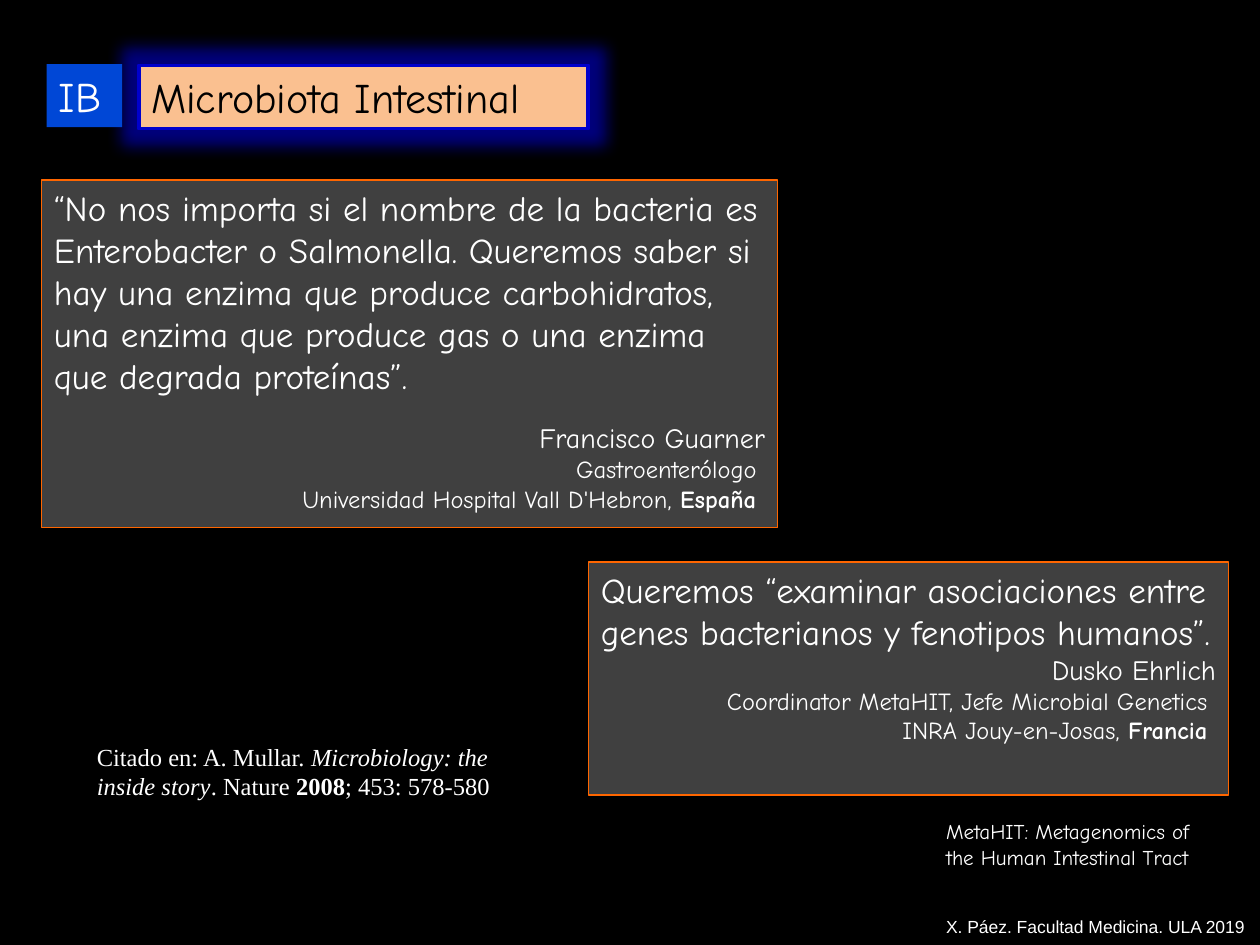
from lxml import etree
from pptx import Presentation
from pptx import util as u
from pptx.dml.color import RGBColor
from pptx.enum import shapes, text
from pptx.oxml import ns

COLORS = {
    "night": "000000",
    "chalk": "FFFFFF",
    "peach": "FAC090",
    "edge": "0000CC",
    "badge": "0047D6",
    "panel": "404040",
    "orange": "FF6600",
}
COLUMNS, ROWS = 100, 75
COMIC, SERIF, SANS = "Comic Neue", "Times New Roman", "Arial"
LEFT, RIGHT = text.PP_ALIGN.LEFT, text.PP_ALIGN.RIGHT

deck = Presentation()
deck.slide_width, deck.slide_height = u.Inches(10), u.Inches(7.5)
slide = deck.slides.add_slide(deck.slide_layouts[5])
column, row = deck.slide_width / COLUMNS, deck.slide_height / ROWS
slide.background.fill.solid()
slide.background.fill.fore_color.rgb = RGBColor.from_string(COLORS["night"])


def dress(block, grid, fill=None, line=None, width=0.75):
    units = (column, row, column, row)
    for side, cells, unit in zip(("left", "top", "width", "height"), grid, units):
        setattr(block, side, round(cells * unit))
    block.shadow.inherit = False
    if fill:
        block.fill.solid()
        block.fill.fore_color.rgb = RGBColor.from_string(COLORS[fill])
    if line:
        block.line.color.rgb = RGBColor.from_string(COLORS[line])
        block.line.width = u.Pt(width)
    else:
        block.line.fill.background()


def write(block, paragraphs, font, color="chalk", wrap=True):
    frame = block.text_frame
    layout = {
        "word_wrap": wrap,
        "auto_size": text.MSO_AUTO_SIZE.NONE,
        "vertical_anchor": text.MSO_ANCHOR.TOP,
    }
    for name, value in layout.items():
        setattr(frame, name, value)
    for index, (size, align, before, runs) in enumerate(paragraphs):
        paragraph = frame.add_paragraph() if index else frame.paragraphs[0]
        paragraph.alignment = align
        paragraph.space_before = u.Pt(before)
        for words, style in runs:
            run = paragraph.add_run()
            run.text = words
            look = {"name": font, "size": u.Pt(size), **style}
            for name, value in look.items():
                setattr(run.font, name, value)
            run.font.color.rgb = RGBColor.from_string(COLORS[color])


heading = slide.shapes.title
dress(heading, (11, 5.2, 35.7, 5), "peach", "edge", 2.25)
write(heading, [(24, LEFT, 0, [("Microbiota Intestinal", {})])], COMIC, "night")
effects = heading._element.spPr.find(ns.qn("a:effectLst"))
glow = etree.SubElement(effects, ns.qn("a:glow"), rad=str(u.Pt(18)))
tint = etree.SubElement(glow, ns.qn("a:srgbClr"), val=COLORS["edge"])
etree.SubElement(tint, ns.qn("a:alpha"), val="60000")

bold, italic = {"bold": True}, {"italic": True}

panels = [
    ((3.7, 5.1, 6, 5), "badge", None, [(24, LEFT, 0, [("IB", {})])]),
    ((46.7, 44.6, 50.8, 18.5), "panel", "orange", [
        (20, LEFT, 0, [("Queremos “examinar asociaciones entre genes bacterianos y fenotipos humanos”.", {})]),
        (16, RIGHT, 0, [("Dusko Ehrlich", {})]),
        (14, RIGHT, 0, [("Coordinator MetaHIT, Jefe Microbial Genetics ", {})]),
        (14, RIGHT, 0, [("INRA Jouy-en-Josas, ", {}), ("Francia ", bold)]),
    ]),
    ((3.3, 14.3, 58.4, 27.6), "panel", "orange", [
        (20, LEFT, 0, [(
            "“No nos importa si el nombre de la bacteria es Enterobacter o Salmonella. "
            "Queremos saber si hay una enzima que produce carbohidratos, una enzima que "
            "produce gas o una enzima que degrada proteínas”.", {})]),
        (16, RIGHT, 14, [("Francisco Guarner", {})]),
        (14, RIGHT, 0, [("Gastroenterólogo ", {})]),
        (14, RIGHT, 0, [("Universidad Hospital Vall D'Hebron, ", {}), ("España ", bold)]),
    ]),
]
for grid, fill, line, paragraphs in panels:
    panel = slide.shapes.add_shape(shapes.MSO_SHAPE.RECTANGLE, 0, 0, 0, 0)
    dress(panel, grid, fill, line)
    write(panel, paragraphs, COMIC)

notes = [
    ((74.1, 72.2, 25.9, 2.7), SANS, False, [
        (10, LEFT, 0, [("X. Páez. Facultad Medicina. ULA 2019", {})]),
    ]),
    ((6.7, 58.4, 35.3, 5.7), SERIF, True, [
        (14, LEFT, 0, [
            ("Citado en: A. Mullar. ", {}),
            ("Microbiology: the inside story", italic),
            (". Nature ", {}),
            ("2008", bold),
            ("; 453: 578-580", {}),
        ]),
    ]),
    ((74.1, 64.5, 24.2, 5), COMIC, True, [
        (12, LEFT, 0, [("MetaHIT: Metagenomics of", {})]),
        (12, LEFT, 0, [("the Human Intestinal Tract", {})]),
    ]),
]
for grid, font, wrap, paragraphs in notes:
    note = slide.shapes.add_textbox(0, 0, 0, 0)
    dress(note, grid)
    write(note, paragraphs, font, wrap=wrap)

deck.save("out.pptx")
